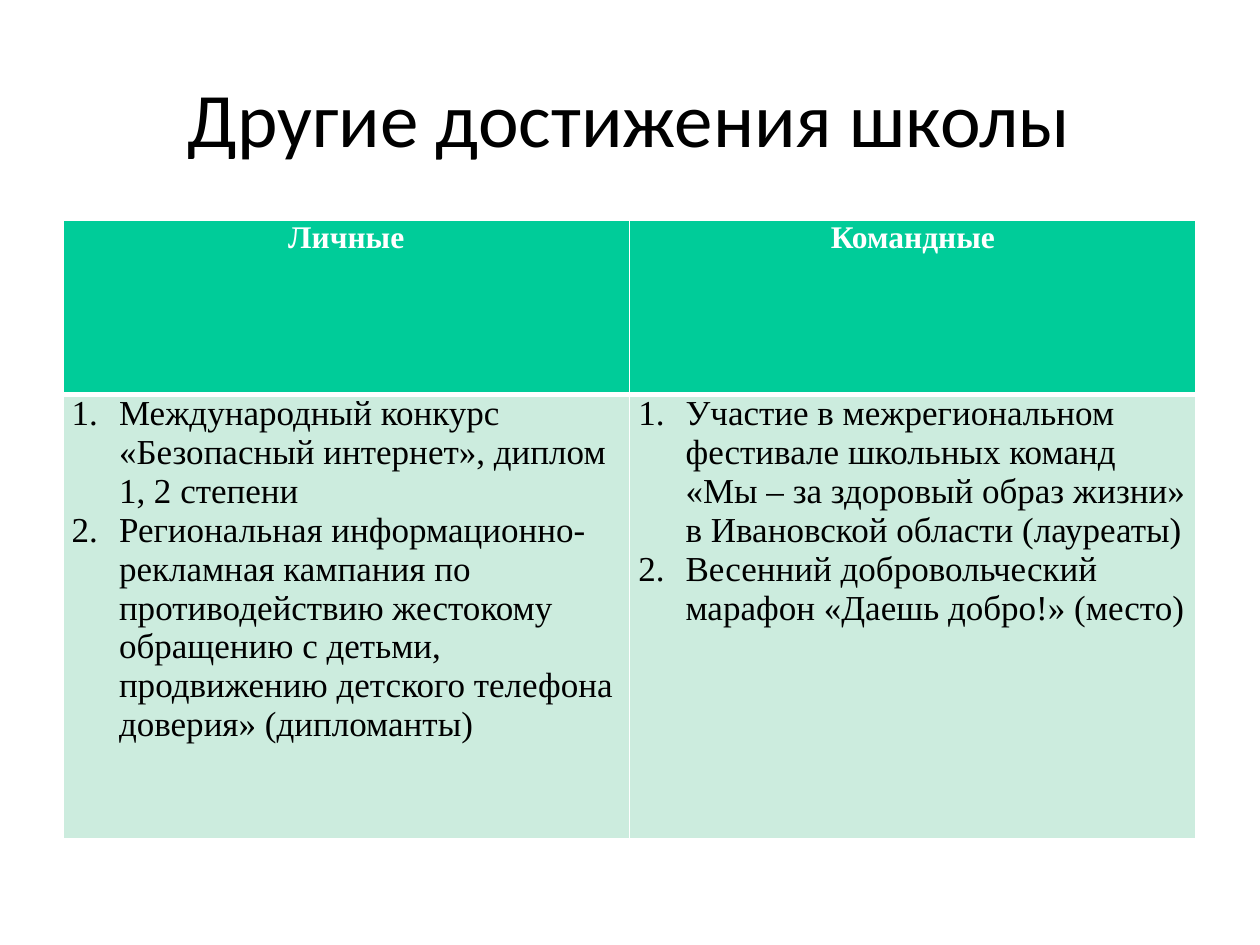
from lxml.etree import SubElement
from pptx import Presentation
from pptx.dml.color import RGBColor
from pptx.enum.text import MSO_ANCHOR as Anchor, PP_ALIGN as Align
from pptx.oxml.ns import qn
from pptx.util import Pt

WHITE = RGBColor(0xFF, 0xFF, 0xFF)
BLACK = RGBColor(0, 0, 0)
GREEN = RGBColor(0x00, 0xCC, 0x99)
MINT = RGBColor(0xCC, 0xEC, 0xDE)

LEFT, WIDTH = 36, 647.5
HEADER_HEIGHT, BODY_HEIGHT = 99.5, 254
INDENT = 27

ACHIEVEMENTS = {
    "Личные": [
        "Международный конкурс «Безопасный интернет», диплом 1, 2 степени",
        "Региональная информационно-рекламная кампания по противодействию "
        "жестокому обращению с детьми, продвижению детского телефона "
        "доверия» (дипломанты)",
    ],
    "Командные": [
        "Участие в межрегиональном фестивале школьных команд «Мы – за "
        "здоровый образ жизни» в Ивановской области (лауреаты)",
        "Весенний добровольческий марафон «Даешь добро!» (место)",
    ],
}


def format_runs(paragraph, font_name, size, color, bold=False):
    for run in paragraph.runs:
        run.font.name = font_name
        run.font.size = Pt(size)
        run.font.color.rgb = color
        run.font.bold = bold


def number_paragraph(paragraph):
    properties = paragraph._p.get_or_add_pPr()
    properties.set("marL", str(Pt(INDENT)))
    properties.set("indent", str(-Pt(INDENT)))
    bullet_color = SubElement(properties, qn("a:buClr"))
    SubElement(bullet_color, qn("a:srgbClr"), val=str(BLACK))
    SubElement(properties, qn("a:buFont"), typeface="+mj-lt")
    SubElement(properties, qn("a:buAutoNum"), type="arabicPeriod")


def set_borders(cell, **widths):
    """Draw white borders; sides are given in the order L, R, T, B."""
    properties = cell._tc.get_or_add_tcPr()
    for side, width in widths.items():
        line = SubElement(properties, qn(f"a:ln{side}"), w=str(Pt(width)))
        fill = SubElement(line, qn("a:solidFill"))
        SubElement(fill, qn("a:srgbClr"), val=str(WHITE))


def style_cell(cell, color, top, bottom):
    cell.margin_left = cell.margin_right = Pt(5)
    cell.margin_top = cell.margin_bottom = 0
    cell.vertical_anchor = Anchor.TOP
    # Borders come before the fill in the cell properties
    set_borders(cell, L=1, R=1, T=top, B=bottom)
    cell.fill.solid()
    cell.fill.fore_color.rgb = color


def add_title(slide, text):
    title = slide.shapes.add_textbox(Pt(LEFT), Pt(10), Pt(WIDTH), Pt(113))
    frame = title.text_frame
    frame.word_wrap = True
    frame.vertical_anchor = Anchor.MIDDLE
    frame.text = text
    heading = frame.paragraphs[0]
    heading.alignment = Align.CENTER
    format_runs(heading, "Calibri", 44, BLACK)


def fill_header(cell, text):
    style_cell(cell, GREEN, top=1, bottom=3)
    cell.text_frame.text = text
    heading = cell.text_frame.paragraphs[0]
    heading.alignment = Align.CENTER
    format_runs(heading, "Times New Roman", 18, WHITE, bold=True)


def fill_numbered_list(cell, items):
    style_cell(cell, MINT, top=3, bottom=1)
    cell.text_frame.text = "\n".join(items)
    for item in cell.text_frame.paragraphs:
        number_paragraph(item)
        format_runs(item, "Times New Roman", 20, BLACK)


def add_achievements(slide):
    table = slide.shapes.add_table(
        2, len(ACHIEVEMENTS), Pt(LEFT), Pt(126),
        Pt(WIDTH), Pt(HEADER_HEIGHT + BODY_HEIGHT)).table
    table.rows[0].height = Pt(HEADER_HEIGHT)
    table.rows[1].height = Pt(BODY_HEIGHT)
    for column, (heading, items) in enumerate(ACHIEVEMENTS.items()):
        fill_header(table.cell(0, column), heading)
        fill_numbered_list(table.cell(1, column), items)


def main():
    deck = Presentation()
    deck.slide_width, deck.slide_height = Pt(720), Pt(540)
    slide = deck.slides.add_slide(deck.slide_layouts[6])

    # Title above the two-column table
    add_title(slide, "Другие достижения школы")
    add_achievements(slide)

    deck.save("out.pptx")


if __name__ == "__main__":
    main()
